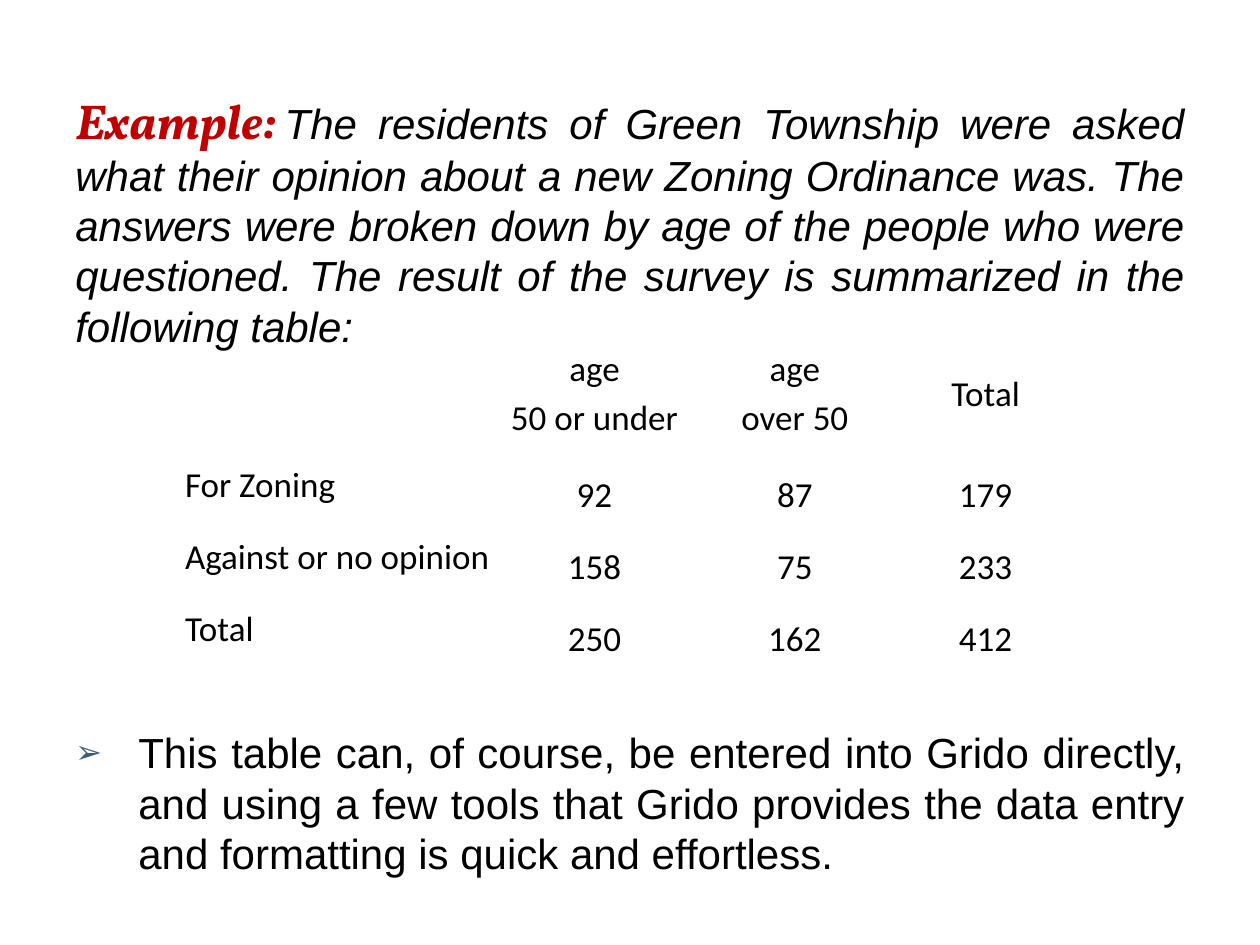
import pptx
import pptx.util
import pptx.dml.color
import pptx.enum.text
import pptx.oxml
import pptx.oxml.ns

Pt = pptx.util.Pt
ALIGN = pptx.enum.text.PP_ALIGN
ANCHOR = pptx.enum.text.MSO_ANCHOR
PLAIN = "{2D5ABB26-0587-4C30-8999-92F81FD0307C}"  # table style: no style, no grid
HARD = chr(160)  # no-break space


def color(code):
    return pptx.dml.color.RGBColor.from_string(code)


class Page:
    ink = "000000"
    red = "C00000"
    blue = "3E5D78"
    body = "Arial"
    head = "Vollkorn"
    grid = "Calibri"

    def __init__(self, deck):
        self.slide = deck.slides.add_slide(deck.slide_layouts[6])

    def run(self, para, text, face, size, tint=ink, bold=False, slant=False):
        run = para.add_run()
        run.text = text
        font = run.font
        font.name, font.size = face, Pt(size)
        font.bold, font.italic = bold, slant
        font.color.rgb = color(tint)

    def box(self, left, top, width, height):
        frame = self.slide.shapes.add_textbox(
            Pt(left), Pt(top), Pt(width), Pt(height)).text_frame
        frame.word_wrap = True
        return frame

    def style(self, para, align, lead, above=0, below=0):
        para.alignment, para.line_spacing = align, lead
        para.space_before, para.space_after = Pt(above), Pt(below)

    def bullet(self, para, mark, indent):
        """Hang the paragraph behind a coloured mark."""
        props = para._p.get_or_add_pPr()
        props.set("marL", str(Pt(indent)))
        props.set("indent", str(Pt(-indent)))
        space = pptx.oxml.ns.nsdecls("a")
        for part in (
            f'<a:buClr {space}><a:srgbClr val="{self.blue}"/></a:buClr>',
            f'<a:buSzPct {space} val="76000"/>',
            f'<a:buFont {space} typeface="{self.body}"/>',
            f'<a:buChar {space} char="{mark}"/>',
        ):
            props.append(pptx.oxml.parse_xml(part))

    def cell(self, cell, text, label):
        """Fill one cell; a label sits top left, a value in the middle."""
        cell.fill.background()
        inset = Pt(0.75 if label else 0)
        cell.margin_left = cell.margin_right = inset
        cell.margin_top = cell.margin_bottom = inset
        cell.vertical_anchor = ANCHOR.TOP if label else ANCHOR.MIDDLE
        para = cell.text_frame.paragraphs[0]
        self.style(para, ALIGN.LEFT if label else ALIGN.CENTER, 1.15, below=10)
        for i, line in enumerate(text.split("\n") if text else []):
            if i:
                para.add_line_break()
            self.run(para, line, self.grid, 20)

    def table(self, left, top, wides, highs, data):
        table = self.slide.shapes.add_table(
            len(highs), len(wides), Pt(left), Pt(top),
            Pt(sum(wides)), Pt(sum(highs))).table
        table.first_row = table.horz_banding = False
        table._tbl.tblPr.find(pptx.oxml.ns.qn("a:tableStyleId")).text = PLAIN
        for col, wide in zip(table.columns, wides):
            col.width = Pt(wide)
        for row, high, texts in zip(table.rows, highs, data):
            row.height = Pt(high)
            for i, (cell, text) in enumerate(zip(row.cells, texts)):
                self.cell(cell, text, i == 0)


def main():
    deck = pptx.Presentation()
    deck.slide_width, deck.slide_height = Pt(720), Pt(540)
    page = Page(deck)

    frame = page.box(36, 48, 648, 455)
    intro = frame.paragraphs[0]
    page.style(intro, ALIGN.JUSTIFY, 1.0, above=6)
    page.run(intro, "Example:" + HARD, page.head, 28, page.red, True, True)
    page.run(intro, "The residents of Green Township were asked what their "
             "opinion about a new Zoning Ordinance was. The answers were "
             "broken down by age of the people who were questioned. The "
             "result of the survey is summarized in the following table:",
             page.body, 24, slant=True)

    note = frame.add_paragraph()
    page.style(note, ALIGN.JUSTIFY, 1.0, above=215)  # room for the table
    page.bullet(note, "➢", 36)
    page.run(note, "This table can, of course, be entered into Grido "
             "directly, and using a few tools that Grido provides the data "
             "entry and formatting is quick and effortless.", page.body, 24)

    page.table(105, 186, [177.5, 114.5, 114.5, 103.5], [75, 41, 41, 41], [
        ["", "age\n50 or under", "age\nover 50", "Total"],
        ["For Zoning", "92", "87", "179"],
        ["Against or no opinion", "158", "75", "233"],
        ["Total", "250", "162", "412"],
    ])
    deck.save("out.pptx")


if __name__ == "__main__":
    main()
